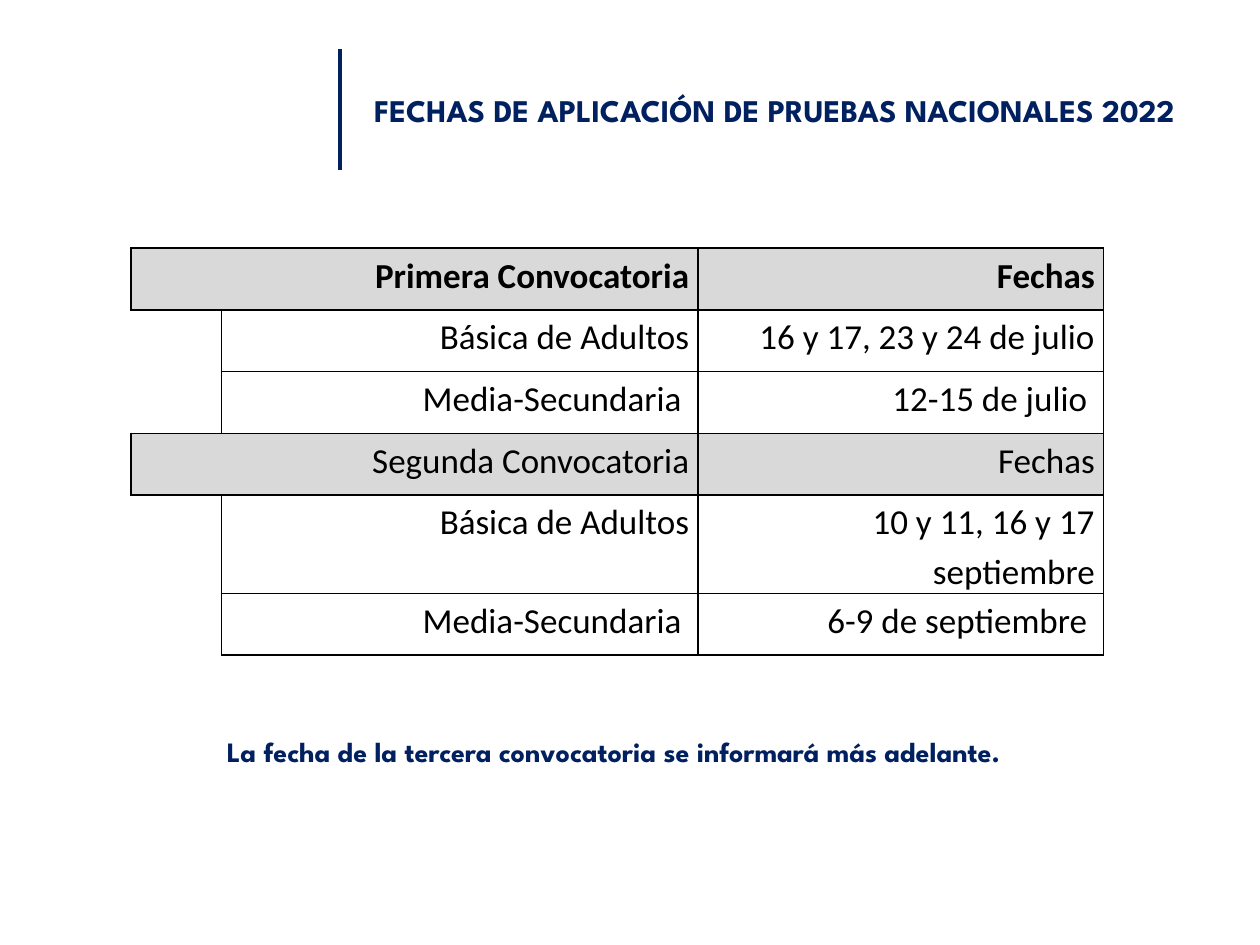
import pptx
import pptx.dml.color
import pptx.enum.shapes
import pptx.enum.text
import pptx.oxml.ns
import pptx.util
from lxml import etree

Inches, Pt = pptx.util.Inches, pptx.util.Pt
qn = pptx.oxml.ns.qn
PP_ALIGN = pptx.enum.text.PP_ALIGN
ANCHOR = pptx.enum.text.MSO_ANCHOR

COLORS = {"navy": "002060", "black": "000000", "gray": "D9D9D9"}
HEADING_FONT, BODY_FONT = "League Spartan", "Calibri"

# Level, date, extra right indent
CALLS = [
    ("Primera Convocatoria", True, [
        ("Básica de Adultos", "16 y 17, 23 y 24 de julio", 0),
        ("Media-Secundaria", "12-15 de julio", 0.06)]),
    ("Segunda Convocatoria", False, [
        ("Básica de Adultos", "10 y 11, 16 y 17 septiembre", 0),
        ("Media-Secundaria", "6-9 de septiembre", 0.06)]),
]


def rgb(name):
    return pptx.dml.color.RGBColor.from_string(COLORS[name])


def add_run(p, text, font, size, color, bold):
    r = p.add_run()
    r.text = text
    r.font.name, r.font.size, r.font.bold = font, Pt(size), bold
    r.font.color.rgb = rgb(color)


def add_heading_text(s, box, text, size):
    sp = s.shapes.add_textbox(*map(Inches, box))
    tf = sp.text_frame
    tf.word_wrap = True
    tf.vertical_anchor = ANCHOR.MIDDLE
    tf.margin_left = tf.margin_right = Inches(0.05)
    tf.margin_top = tf.margin_bottom = Inches(0.05)
    add_run(tf.paragraphs[0], text, HEADING_FONT, size, "navy", True)


def add_title(s, box):
    left, top, width, height = box
    # Vertical rule beside the title
    line = s.shapes.add_connector(
        pptx.enum.shapes.MSO_CONNECTOR.STRAIGHT, Inches(left), Inches(top),
        Inches(left), Inches(top + height))
    line.line.color.rgb = rgb("navy")
    line.line.width = Pt(2)
    etree.SubElement(line._element.spPr, qn("a:effectLst"))
    gap = 0.22
    add_heading_text(s, (left + gap, top, width - gap, height),
                     "FECHAS DE APLICACIÓN DE PRUEBAS NACIONALES 2022", 18)


def set_borders(cell, sides):
    tcPr = cell._tc.get_or_add_tcPr()
    for side in "LRTB":
        ln = etree.SubElement(tcPr, qn("a:ln" + side), w=str(Pt(1)))
        if side in sides:
            fill = etree.SubElement(ln, qn("a:solidFill"))
            etree.SubElement(fill, qn("a:srgbClr"), val=COLORS["black"])
        else:
            etree.SubElement(ln, qn("a:noFill"))


def style_cell(cell, sides="LRTB", fill=None):
    set_borders(cell, sides)
    if fill:
        cell.fill.solid()
        cell.fill.fore_color.rgb = rgb(fill)
    else:
        cell.fill.background()


def write_cell(cell, text, bold=False, indent=0):
    cell.margin_left = Inches(0.07)
    cell.margin_right = Inches(0.07 + indent)
    cell.margin_top = cell.margin_bottom = 0
    p = cell.text_frame.paragraphs[0]
    p.alignment = PP_ALIGN.RIGHT
    p.line_spacing, p.space_after = 1.15, Pt(10)
    add_run(p, text, BODY_FONT, 20, "black", bold)


def add_dates_table(s, box):
    n_rows = sum(1 + len(levels) for _, _, levels in CALLS)
    table = s.shapes.add_table(n_rows, 3, *map(Inches, box)).table
    table.first_row = table.horz_banding = False
    for col, width in zip(table.columns, (0.72, 3.78, 3.22)):
        col.width = Inches(width)
    for row in table.rows:
        row.height = Inches(0.49)

    i = 0
    for call_no, (name, bold, levels) in enumerate(CALLS):
        # Grey heading row
        for j in range(3):
            style_cell(table.cell(i, j), fill="gray")
        table.cell(i, 0).merge(table.cell(i, 1))
        write_cell(table.cell(i, 0), name, bold)
        write_cell(table.cell(i, 2), "Fechas", bold)
        # One row per level, with an open cell at the left
        for k, (level, date, indent) in enumerate(levels):
            i += 1
            closed = k == len(levels) - 1 and call_no < len(CALLS) - 1
            sides = "R" + ("T" if k == 0 else "") + ("B" if closed else "")
            style_cell(table.cell(i, 0), sides)
            for j, text in enumerate((level, date), 1):
                style_cell(table.cell(i, j))
                write_cell(table.cell(i, j), text, indent=indent)
        i += 1
    # The two-line date needs a taller row
    table.rows[4].height = Inches(0.78)


def add_note(s, box):
    add_heading_text(
        s, box,
        "La fecha de la tercera convocatoria se informará más adelante.", 16)


def main():
    prs = pptx.Presentation()
    prs.slide_width, prs.slide_height = Inches(10), Inches(7.5)
    s = prs.slides.add_slide(prs.slide_layouts[6])
    add_title(s, (2.7, 0.39, 6.8, 0.96))
    add_dates_table(s, (1.04, 1.97, 7.72, 3.22))
    add_note(s, (1.75, 5.48, 7.18, 0.96))
    prs.save("out.pptx")


if __name__ == "__main__":
    main()
